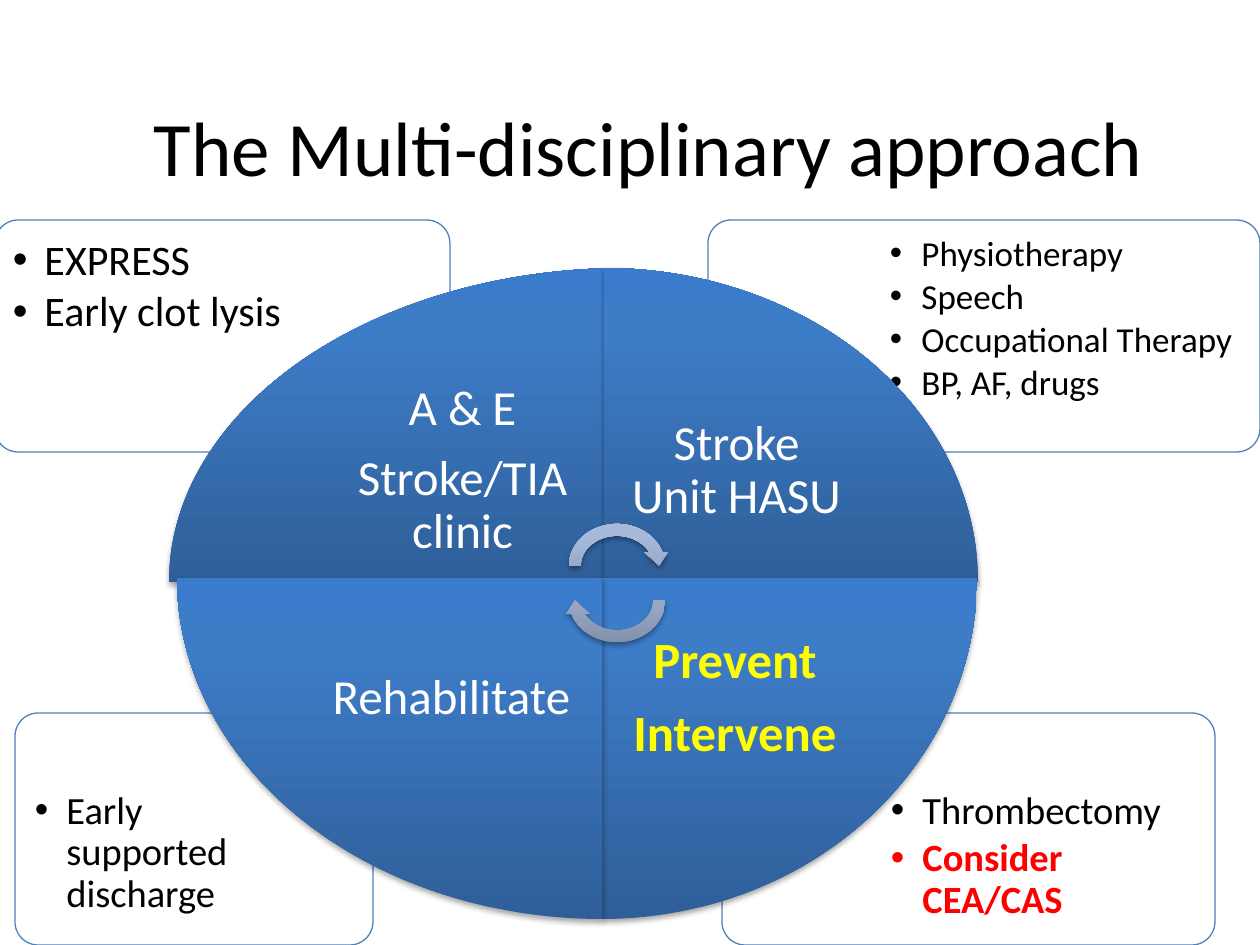
"""Build the slide on the multi-disciplinary approach to stroke care."""
import pptx
import pptx.util
import pptx.oxml
import pptx.oxml.ns
import pptx.dml.color
import pptx.enum.shapes
import pptx.enum.text

RGB = pptx.dml.color.RGBColor
BLACK = RGB(0x00, 0x00, 0x00)
WHITE = RGB(0xFF, 0xFF, 0xFF)
RED = RGB(0xFF, 0x00, 0x00)
YELLOW = RGB(0xFF, 0xFF, 0x00)
EDGE = RGB(0x4F, 0x81, 0xBD)
BLUES = (RGB(0x2F, 0x5F, 0x99), RGB(0x3D, 0x7C, 0xC7), RGB(0x3A, 0x7C, 0xCB))
GREYS = (RGB(0x81, 0x8F, 0xA8), RGB(0xA7, 0xB9, 0xDA), RGB(0xA7, 0xBA, 0xDC))
KIND = pptx.enum.shapes.MSO_SHAPE
ANCHOR = pptx.enum.text.MSO_ANCHOR
CENTER = pptx.enum.text.PP_ALIGN.CENTER
NS = pptx.oxml.ns.nsdecls("a")
SCALE = 914400 / 126

deck = pptx.Presentation()
deck.slide_width = round(1260 * SCALE)
deck.slide_height = round(945 * SCALE)
slide = deck.slides.add_slide(deck.slide_layouts[6])


def write(box, lines, size, inset, bullet=False, after=0):
    """Add a text box; each line is a text, a colour and a bold flag."""
    area = slide.shapes.add_textbox(*[round(n * SCALE) for n in box])
    frame = area.text_frame
    pad = round(inset * SCALE)
    look = {"word_wrap": True, "margin_left": pad, "margin_right": pad,
            "margin_top": pad, "margin_bottom": pad,
            "vertical_anchor": ANCHOR.TOP if bullet else ANCHOR.MIDDLE}
    for key, value in look.items():
        setattr(frame, key, value)
    for i, (text, color, bold) in enumerate(lines):
        para = frame.add_paragraph() if i else frame.paragraphs[0]
        props = para._p.get_or_add_pPr()
        if after:
            para.line_spacing = 0.9
            props.append(pptx.oxml.parse_xml(
                f'<a:spcAft {NS}><a:spcPct val="{after * 1000}"/></a:spcAft>'))
        if bullet:
            props.set("marL", "228600")
            props.set("indent", "-228600")
            props.append(pptx.oxml.parse_xml(f'<a:buFont {NS} typeface="Arial"/>'))
            props.append(pptx.oxml.parse_xml(f'<a:buChar {NS} char="•"/>'))
        else:
            para.alignment = CENTER
        run = para.add_run()
        run.text = text
        run.font.color.rgb = color
        style = {"name": "Calibri", "size": pptx.util.Pt(size), "bold": bold}
        for key, value in style.items():
            setattr(run.font, key, value)


def shade(kind, box, turn, tones):
    """Add a turned shape with an upright gradient and a soft shadow."""
    shape = slide.shapes.add_shape(kind, *[round(n * SCALE) for n in box])
    shape.rotation = turn
    shape.line.fill.background()
    shape.shadow.inherit = False
    stops = "".join(f'<a:gs pos="{pos}"><a:srgbClr val="{tone}"/></a:gs>'
                    for pos, tone in zip((0, 80000, 100000), tones))
    props = shape._element.spPr
    props.insert(2, pptx.oxml.parse_xml(
        f'<a:gradFill {NS} rotWithShape="0"><a:gsLst>{stops}</a:gsLst>'
        '<a:lin ang="16200000" scaled="0"/></a:gradFill>'))
    props.find(pptx.oxml.ns.qn("a:effectLst")).append(pptx.oxml.parse_xml(
        f'<a:outerShdw {NS} blurRad="40000" dist="23000" dir="5400000" rotWithShape="0">'
        '<a:srgbClr val="000000"><a:alpha val="35000"/></a:srgbClr></a:outerShdw>'))


write((82, 67, 1134, 158), [("The Multi-disciplinary approach", BLACK, False)], 44, 12)

cards = [
    ((722, 713, 493, 232), (876, 776, 335, 164), 22, 15,
     [("Thrombectomy", BLACK, False), ("Consider CEA/CAS", RED, True)]),
    ((15, 713, 358, 232), (20, 776, 241, 164), 22, 15,
     [("Early supported discharge", BLACK, False)]),
    ((708, 220, 552, 232), (880, 226, 375, 164), 20, 10,
     [(text, BLACK, False) for text in
      ("Physiotherapy", "Speech", "Occupational Therapy", "BP, AF, drugs")]),
    ((-5, 220, 455, 232), (0, 226, 309, 164), 24, 13,
     [("EXPRESS", BLACK, False), ("Early clot lysis", BLACK, False)]),
]
for box, area, size, inset, lines in cards:
    card = slide.shapes.add_shape(KIND.ROUNDED_RECTANGLE, *[round(n * SCALE) for n in box])
    card.adjustments[0] = 0.1
    card.shadow.inherit = False
    card.fill.solid()
    card.fill.fore_color.rgb = WHITE
    tint = card._element.spPr.find(".//" + pptx.oxml.ns.qn("a:srgbClr"))
    tint.append(pptx.oxml.parse_xml(f'<a:alpha {NS} val="90000"/>'))
    card.line.color.rgb = EDGE
    card.line.width = pptx.util.Pt(0.75)
    write(area, lines, size, inset, bullet=True, after=15)

wedges = [
    ((169, 268, 456, 314), 0, (301, 360, 323, 222), 28,
     [("A & E", WHITE, False), ("Stroke/TIA clinic", WHITE, False)]),
    ((634, 238, 314, 374), 90, (604, 360, 265, 222), 28,
     [("Stroke Unit HASU", WHITE, False)]),
    ((602, 578, 375, 341), 180, (602, 578, 266, 241), 29,
     [("Prevent", YELLOW, True), ("Intervene", YELLOW, True)]),
    ((219, 536, 341, 425), 270, (301, 578, 301, 241), 28,
     [("Rehabilitate", WHITE, False)]),
]
for box, turn, area, size, lines in wedges:
    shade(KIND.PIE_WEDGE, box, turn, BLUES)
    write(area, lines, size, 28, after=35)

for top, turn in ((518, 0), (553, 180)):
    shade(KIND.CIRCULAR_ARROW, (563, top, 108, 95), turn, GREYS)

deck.save("out.pptx")
